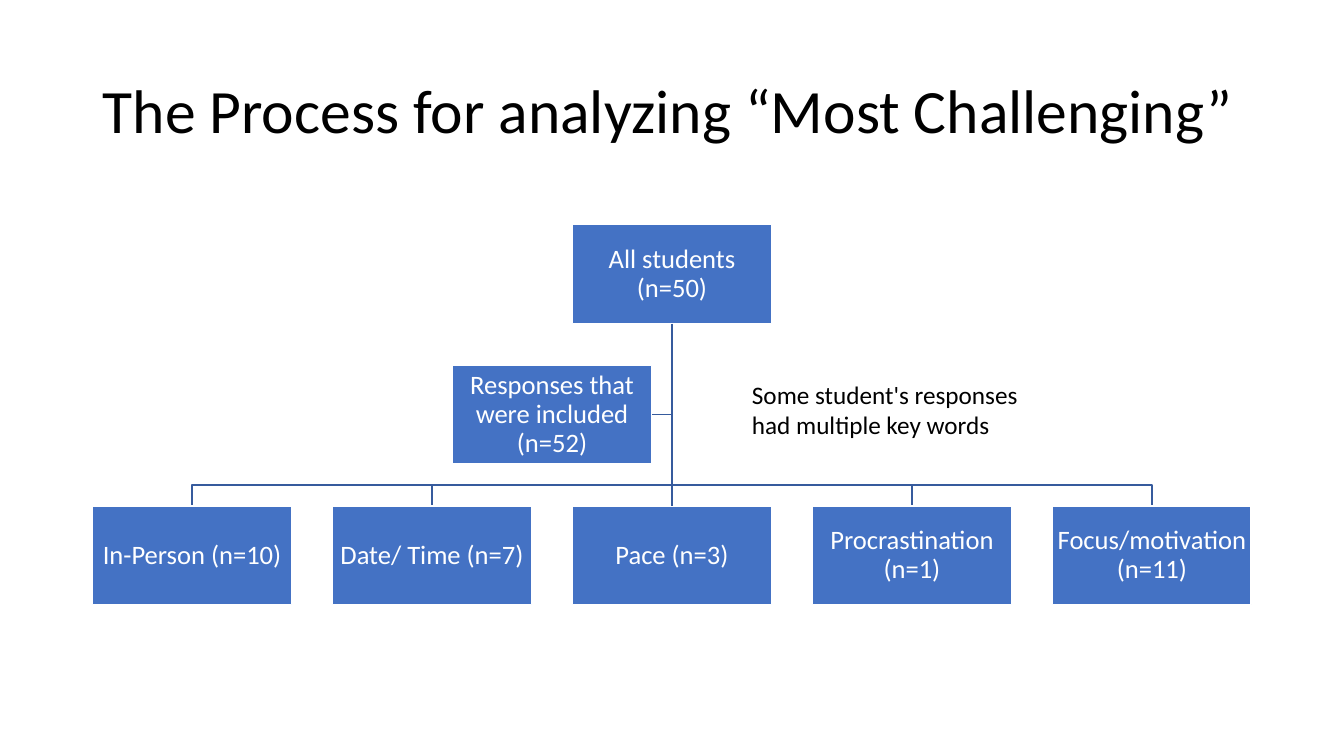
from lxml import etree
from pptx import Presentation
from pptx import util as u
from pptx.dml.color import RGBColor
from pptx.enum import shapes, text
from pptx.oxml import ns

BLUE = RGBColor(0x44, 0x72, 0xC4)
LINK_BLUE = RGBColor(0x36, 0x5B, 0x9D)
WHITE = RGBColor(0xFF, 0xFF, 0xFF)
BLACK = RGBColor(0, 0, 0)

CATEGORIES = ["In-Person (n=10)", "Date/ Time (n=7)", "Pace (n=3)",
              "Procrastination (n=1)", "Focus/motivation (n=11)"]
MIDDLE, ASSISTANT = 2, 1.5


class ChartPage:
    font = "Calibri"
    left, top = u.Inches(0.92), u.Inches(2.23)
    column, row = u.Inches(2.38), u.Inches(1.395)
    width, height = u.Inches(1.97), u.Inches(0.98)
    half_gap = (row - height) // 2

    def __init__(self, deck):
        self.page = deck.slides.add_slide(deck.slide_layouts[5])

    def corner(self, column, row):
        return int(self.left + column * self.column), int(self.top + row * self.row)

    def trunk_start(self):
        left, top = self.corner(MIDDLE, 0)
        return left + self.width // 2, top + self.height

    def set_words(self, frame, words, size, color, align, spacing=1.0):
        frame.text = words
        frame.word_wrap = True
        para = frame.paragraphs[0]
        para.alignment = align
        para.line_spacing = spacing
        for span in para.runs:
            span.font.name = self.font
            span.font.size = u.Pt(size)
            span.font.color.rgb = color

    def title(self, words):
        box = self.page.shapes.title
        box.left, box.top = self.left, u.Inches(0.4)
        box.width, box.height = u.Inches(11.5), u.Inches(1.45)
        frame = box.text_frame
        self.set_words(frame, words, 44, BLACK, text.PP_ALIGN.LEFT, 0.9)
        frame.auto_size = text.MSO_AUTO_SIZE.NONE
        frame.vertical_anchor = text.MSO_ANCHOR.MIDDLE

    def node(self, words, column, row):
        box = self.page.shapes.add_shape(
            shapes.MSO_SHAPE.RECTANGLE, *self.corner(column, row), self.width, self.height)
        box.shadow.inherit = False
        box.fill.solid()
        box.fill.fore_color.rgb = BLUE
        box.line.color.rgb = WHITE
        box.line.width = u.Pt(1)
        frame = box.text_frame
        self.set_words(frame, words, 19, WHITE, text.PP_ALIGN.CENTER, 0.9)
        frame.vertical_anchor = text.MSO_ANCHOR.MIDDLE
        frame.margin_left = frame.margin_right = u.Inches(0.01)
        frame.margin_top = frame.margin_bottom = u.Inches(0.01)
        return box

    def elbow(self, points):
        builder = self.page.shapes.build_freeform(*points[0], scale=1.0)
        builder.add_line_segments(points[1:], close=False)
        link = builder.convert_to_shape()
        link.shadow.inherit = False
        link.fill.background()
        link.line.color.rgb = LINK_BLUE
        link.line.width = u.Pt(1)

    def branch(self, column):
        trunk, start = self.trunk_start()
        left, end = self.corner(column, 2)
        target, bus = left + self.width // 2, end - self.half_gap
        self.elbow([(trunk, start), (trunk, bus), (target, bus), (target, end)])

    def side_branch(self, column, row):
        trunk, start = self.trunk_start()
        left, top = self.corner(column, row)
        level = top + self.height // 2
        self.elbow([(trunk, start), (trunk, level), (left + self.width, level)])

    def straight(self, parent, child):
        link = self.page.shapes.add_connector(shapes.MSO_CONNECTOR.STRAIGHT, 0, 0, 0, 0)
        link.begin_connect(parent, 2)
        link.end_connect(child, 0)
        link.line.color.rgb = LINK_BLUE
        link.line.width = u.Pt(1)
        etree.SubElement(link._element.spPr, ns.qn("a:effectLst"))

    def note(self, words, left, top, width, height):
        box = self.page.shapes.add_textbox(
            u.Inches(left), u.Inches(top), u.Inches(width), u.Inches(height))
        self.set_words(box.text_frame, words, 18, BLACK, text.PP_ALIGN.LEFT)


def main():
    deck = Presentation()
    deck.slide_width, deck.slide_height = u.Inches(13.33), u.Inches(7.5)
    chart = ChartPage(deck)
    chart.title("The Process for analyzing “Most Challenging”")
    chart.side_branch(ASSISTANT, 1)
    for column in range(len(CATEGORIES)):
        if column != MIDDLE:
            chart.branch(column)
    students = chart.node("All students (n=50)", MIDDLE, 0)
    boxes = [chart.node(words, column, 2) for column, words in enumerate(CATEGORIES)]
    chart.straight(students, boxes[MIDDLE])
    chart.node("Responses that were included (n=52)", ASSISTANT, 1)
    chart.note("Some student's responses had multiple key words", 7.36, 3.71, 2.86, 0.71)
    deck.save("out.pptx")


if __name__ == "__main__":
    main()
